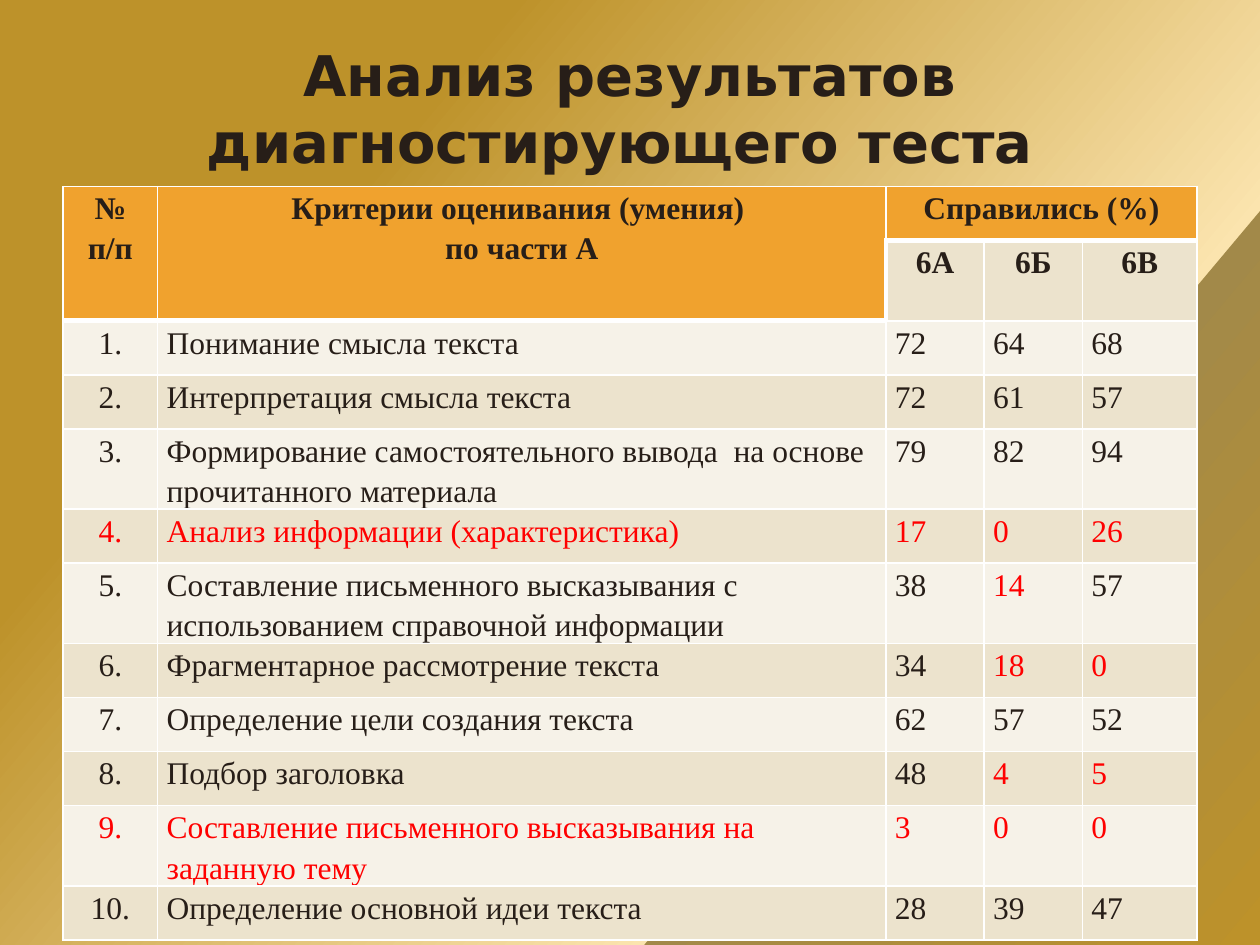
from lxml import etree
from pptx import Presentation
from pptx import util as u
from pptx.dml.color import RGBColor
from pptx.enum import text
from pptx.oxml import ns

COLORS = {
    "text": "271E18", "weak": "FF0000", "header": "F0A22E",
    "odd": "F6F2E8", "even": "ECE3CD", "border": "FFFFFF",
}
BACKDROP = [(0, "BD922A"), (25, "BD922A"), (70, "FBE4AE"), (70, "A28949"), (100, "BD922A")]
COLUMN_WIDTHS = [1.91, 14.68, 1.98, 1.98, 2.31]
ROW_HEIGHT, TALL_ROW_HEIGHT = 1.09, 1.42
TALL_ROWS = {4, 6}
HEADINGS = [
    ["№ п/п", "Критерии оценивания (умения) \nпо части А", "Справились (%)", "", ""],
    ["", "", "6А", "6Б", "6В"],
]
ALL = {0, 1, 2, 3, 4}
RESULTS = [
    ("Понимание смысла текста", 72, 64, 68, set()),
    ("Интерпретация смысла текста", 72, 61, 57, set()),
    ("Формирование самостоятельного вывода  на основе прочитанного материала", 79, 82, 94, set()),
    ("Анализ информации (характеристика)", 17, 0, 26, ALL),
    ("Составление письменного высказывания с использованием справочной информации",
     38, 14, 57, {3}),
    ("Фрагментарное рассмотрение текста", 34, 18, 0, {3, 4}),
    ("Определение цели создания текста", 62, 57, 52, set()),
    ("Подбор заголовка", 48, 4, 5, {3, 4}),
    ("Составление письменного высказывания на заданную тему", 3, 0, 0, ALL),
    ("Определение основной идеи текста", 28, 39, 47, set()),
]


class ResultsSlide:
    title_font = "DejaVu Sans"
    table_font = "Times New Roman"

    def __init__(self, deck):
        self.slide = deck.slides.add_slide(deck.slide_layouts[5])

    def backdrop(self, stops, angle):
        fill = self.slide.background.fill
        fill.gradient()
        stop_list = self.slide.element.find(".//" + ns.qn("a:gsLst"))
        for stop in list(stop_list):
            stop_list.remove(stop)
        for position, color in stops:
            stop = etree.SubElement(stop_list, ns.qn("a:gs"), pos=str(position * 1000))
            etree.SubElement(stop, ns.qn("a:srgbClr"), val=color)
        fill.gradient_angle = 360 - angle

    def format(self, paragraph, font, size, color, bold, align):
        paragraph.alignment = align
        for run in paragraph.runs:
            run.font.name = font
            run.font.size = u.Pt(size)
            run.font.bold = bold
            run.font.color.rgb = RGBColor.from_string(COLORS[color])

    def title(self, wording, left, top, width, height):
        heading = self.slide.shapes.title
        heading.left, heading.top = u.Cm(left), u.Cm(top)
        heading.width, heading.height = u.Cm(width), u.Cm(height)
        frame = heading.text_frame
        frame.text = wording
        frame.word_wrap = True
        frame.auto_size = text.MSO_AUTO_SIZE.NONE
        frame.vertical_anchor = text.MSO_ANCHOR.MIDDLE
        self.format(frame.paragraphs[0], self.title_font, 32, "text", True,
                    text.PP_ALIGN.CENTER)

    def table(self, left, top, widths, heights):
        frame = self.slide.shapes.add_table(
            len(heights), len(widths), u.Cm(left), u.Cm(top),
            u.Cm(sum(widths)), u.Cm(sum(heights)))
        grid = frame.table
        grid.first_row = grid.horz_banding = False
        for column, width in zip(grid.columns, widths):
            column.width = u.Cm(width)
        for row, height in zip(grid.rows, heights):
            row.height = u.Cm(height)
        return grid

    def cell(self, cell, wording, fill, color="text", bold=False, centered=False, thick=""):
        cell.margin_left = cell.margin_right = u.Cm(0.18)
        cell.margin_top = cell.margin_bottom = 0
        cell.fill.solid()
        cell.fill.fore_color.rgb = RGBColor.from_string(COLORS[fill])
        cell.text_frame.text = wording
        align = text.PP_ALIGN.CENTER if centered else text.PP_ALIGN.LEFT
        for paragraph in cell.text_frame.paragraphs:
            paragraph.line_spacing = 1.15
            self.format(paragraph, self.table_font, 18, color, bold, align)
        self.borders(cell, thick)

    def borders(self, cell, thick):
        properties = cell._tc.get_or_add_tcPr()
        for index, side in enumerate("LRTB"):
            width = u.Pt(3 if side in thick else 1)
            line = etree.Element(ns.qn("a:ln" + side), w=str(int(width)))
            solid = etree.SubElement(line, ns.qn("a:solidFill"))
            etree.SubElement(solid, ns.qn("a:srgbClr"), val=COLORS["border"])
            properties.insert(index, line)


def heading_borders(row, column):
    if row == 0 or column < 2:
        return "B"
    return "LT" if column == 2 else "T"


def main():
    deck = Presentation()
    deck.slide_width, deck.slide_height = u.Cm(25.4), u.Cm(19.05)
    page = ResultsSlide(deck)
    page.backdrop(BACKDROP, 40)
    page.title("Анализ результатов диагностирующего теста ", 1.27, 0.41, 22.86, 3.53)

    row_count = len(HEADINGS) + len(RESULTS)
    heights = [TALL_ROW_HEIGHT if row in TALL_ROWS else ROW_HEIGHT for row in range(row_count)]
    results = page.table(1.27, 3.76, COLUMN_WIDTHS, heights)

    for row, labels in enumerate(HEADINGS):
        for column, label in enumerate(labels):
            fill = "even" if row == 1 and column > 1 else "header"
            page.cell(results.cell(row, column), label, fill, bold=True, centered=True,
                      thick=heading_borders(row, column))
    for first, last in [((0, 0), (1, 0)), ((0, 1), (1, 1)), ((0, 2), (0, 4))]:
        results.cell(*first).merge(results.cell(*last))

    for number, (skill, *scores, weak) in enumerate(RESULTS, 1):
        for column, value in enumerate([f"{number}.", skill, *scores]):
            page.cell(results.cell(number + 1, column), str(value),
                      "odd" if number % 2 else "even",
                      color="weak" if column in weak else "text",
                      centered=column == 0,
                      thick="T" if number == 1 and column < 2 else "")

    deck.save("out.pptx")


if __name__ == "__main__":
    main()
